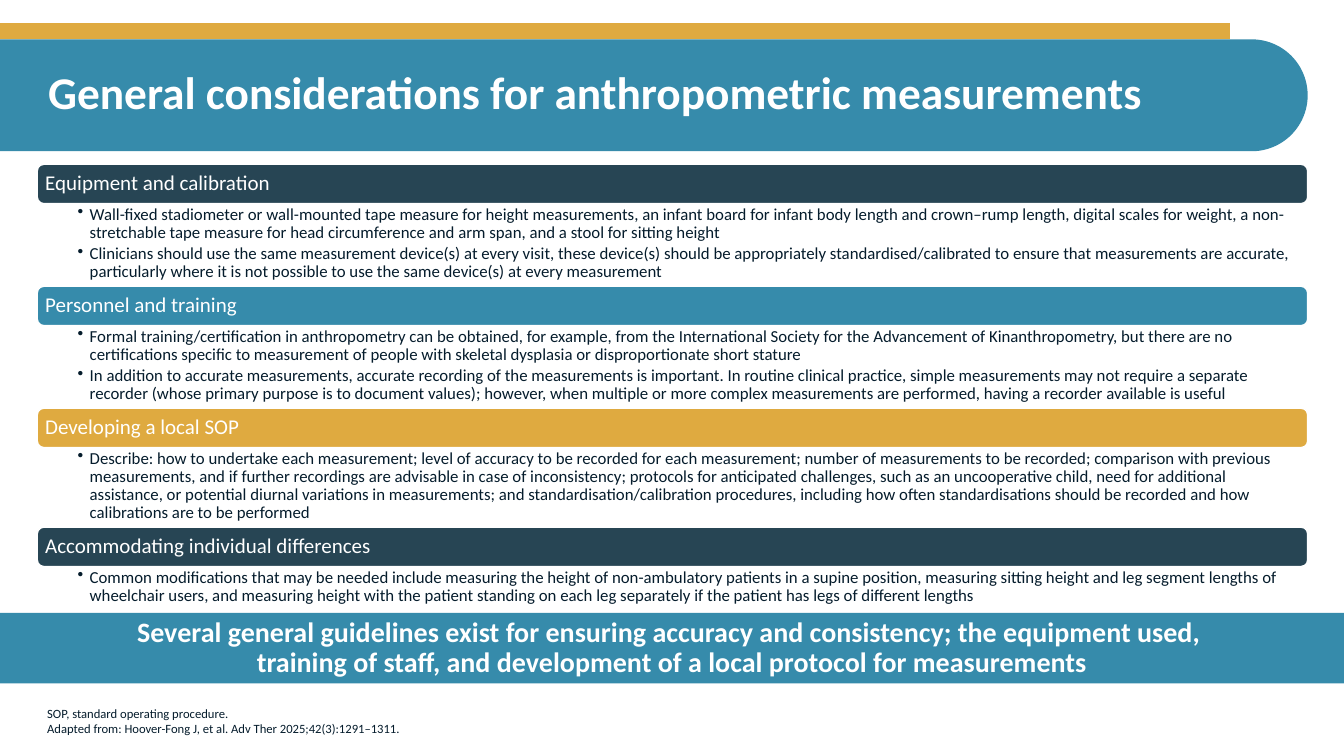
from lxml import etree
from pptx import Presentation
from pptx.dml.color import RGBColor
from pptx.enum.shapes import MSO_SHAPE as Shape
from pptx.enum.text import MSO_ANCHOR as Anchor, PP_ALIGN as Align
from pptx.oxml.ns import qn
from pptx.util import Inches, Pt

TEAL = RGBColor(0x36, 0x8B, 0xAB)
NAVY = RGBColor(0x27, 0x45, 0x54)
GOLD = RGBColor(0xDF, 0xAA, 0x40)
INK = RGBColor(0x05, 0x1C, 0x2C)
WHITE = RGBColor(0xFF, 0xFF, 0xFF)

SLIDE_WIDTH, SLIDE_HEIGHT = 13.33, 7.5
SECTION_LEFT, SECTION_TOP, SECTION_WIDTH = 0.37, 1.63, 12.6
HEADING_HEIGHT = 0.39
BULLET_INDENT = 0.12

# Heading, heading colour, height of the bullet area, bullets
SECTIONS = [
    ("Equipment and calibration", NAVY, 0.82, [
        "Wall-fixed stadiometer or wall-mounted tape measure for height measurements, an infant "
        "board for infant body length and crown–rump length, digital scales for weight, a "
        "non-stretchable tape measure for head circumference and arm span, and a stool for "
        "sitting height",
        "Clinicians should use the same measurement device(s) at every visit, these device(s) "
        "should be appropriately standardised/calibrated to ensure that measurements are "
        "accurate, particularly where it is not possible to use the same device(s) at every "
        "measurement",
    ]),
    ("Personnel and training", TEAL, 0.82, [
        "Formal training/certification in anthropometry can be obtained, for example, from the "
        "International Society for the Advancement of Kinanthropometry, but there are no "
        "certifications specific to measurement of people with skeletal dysplasia or "
        "disproportionate short stature",
        "In addition to accurate measurements, accurate recording of the measurements is "
        "important. In routine clinical practice, simple measurements may not require a separate "
        "recorder (whose primary purpose is to document values); however, when multiple or more "
        "complex measurements are performed, having a recorder available is useful",
    ]),
    ("Developing a local SOP", GOLD, 0.79, [
        "Describe: how to undertake each measurement; level of accuracy to be recorded for each "
        "measurement; number of measurements to be recorded; comparison with previous "
        "measurements, and if further recordings are advisable in case of inconsistency; "
        "protocols for anticipated challenges, such as an uncooperative child, need for "
        "additional assistance, or potential diurnal variations in measurements; and "
        "standardisation/calibration procedures, including how often standardisations should be "
        "recorded and how calibrations are to be performed",
    ]),
    ("Accommodating individual differences", NAVY, 0.42, [
        "Common modifications that may be needed include measuring the height of non-ambulatory "
        "patients in a supine position, measuring sitting height and leg segment lengths of "
        "wheelchair users, and measuring height with the patient standing on each leg separately "
        "if the patient has legs of different lengths",
    ]),
]
MESSAGE = ("Several general guidelines exist for ensuring accuracy and consistency; "
           "the equipment used, \vtraining of staff, and development of a local protocol "
           "for measurements")
FOOTNOTES = [
    "SOP, standard operating procedure.",
    "Adapted from: Hoover-Fong J, et al. Adv Ther 2025;42(3):1291–1311.",
]


def apply_format(target, values):
    for name, value in values.items():
        setattr(target, name, value)


def add_panel(slide, kind, box, color, outline=None):
    panel = slide.shapes.add_shape(kind, *map(Inches, box))
    panel.shadow.inherit = False
    panel.fill.solid()
    panel.fill.fore_color.rgb = color
    if outline is None:
        panel.line.fill.background()
    else:
        panel.line.color.rgb = outline
        panel.line.width = Pt(1)
    return panel


def add_label(slide, box):
    return slide.shapes.add_textbox(*map(Inches, box))


def add_bullet(paragraph):
    properties = paragraph._p.get_or_add_pPr()
    properties.set("lvl", "1")
    properties.set("marL", str(Inches(BULLET_INDENT)))
    properties.set("indent", str(-Inches(BULLET_INDENT)))
    etree.SubElement(properties, qn("a:buChar")).set("char", "•")


def write(holder, lines, size, color, bold=False, anchor=Anchor.MIDDLE, margins=(0.1, 0.05),
          align=Align.LEFT, line_spacing=0.9, space_after=0, bulleted=False):
    """Fill a shape with paragraphs; margins are (sides, top and bottom) or (left, right, both)."""
    frame = holder.text_frame
    left, right, vertical = margins if len(margins) == 3 else (margins[0], *margins)
    apply_format(frame, {
        "word_wrap": True,
        "vertical_anchor": anchor,
        "margin_left": Inches(left),
        "margin_right": Inches(right),
        "margin_top": Inches(vertical),
        "margin_bottom": Inches(vertical),
    })
    for index, line in enumerate(lines):
        paragraph = frame.add_paragraph() if index else frame.paragraphs[0]
        paragraph.text = line
        apply_format(paragraph, {
            "alignment": align,
            "line_spacing": line_spacing,
            "space_after": Pt(space_after),
        })
        if bulleted:
            add_bullet(paragraph)
        for run in paragraph.runs:
            apply_format(run.font, {"name": "Calibri", "size": Pt(size), "bold": bold})
            run.font.color.rgb = color


def add_title_banner(slide, title):
    add_panel(slide, Shape.RECTANGLE, (0, 0.23, 12.2, 0.16), GOLD)
    banner = add_panel(slide, Shape.ROUND_2_SAME_RECTANGLE, (5.93, -5.54, 1.11, 12.97), TEAL)
    banner.rotation = 270
    banner.adjustments[0] = 0
    banner.adjustments[1] = 0.5
    write(add_label(slide, (0.38, 0.39, 12.2, 1.1)), [title], 32.4, WHITE, bold=True)


def add_section(slide, top, heading, color, body_height, bullets):
    bar_box = (SECTION_LEFT, top, SECTION_WIDTH, HEADING_HEIGHT)
    bar = add_panel(slide, Shape.ROUNDED_RECTANGLE, bar_box, color, outline=WHITE)
    write(bar, [heading], 15, WHITE, margins=(0.06, 0.06))
    body_box = (SECTION_LEFT, top + HEADING_HEIGHT, SECTION_WIDTH, body_height)
    write(add_label(slide, body_box), bullets, 12, INK, anchor=Anchor.TOP,
          margins=(0.4, 0.12, 0.02), space_after=2.4, bulleted=True)


def main():
    presentation = Presentation()
    presentation.slide_width = Inches(SLIDE_WIDTH)
    presentation.slide_height = Inches(SLIDE_HEIGHT)
    slide = presentation.slides.add_slide(presentation.slide_layouts[6])

    add_title_banner(slide, "General considerations for anthropometric measurements")

    top = SECTION_TOP
    for heading, color, body_height, bullets in SECTIONS:
        add_section(slide, top, heading, color, body_height, bullets)
        top += HEADING_HEIGHT + body_height

    message_band = add_panel(slide, Shape.RECTANGLE, (0, 6.08, SLIDE_WIDTH, 0.7), TEAL)
    write(message_band, [MESSAGE], 20, WHITE, bold=True, margins=(0.79, 0.05),
          align=Align.CENTER)
    write(add_label(slide, (0.37, 6.71, 10.67, 0.64)), FOOTNOTES, 9, INK,
          anchor=Anchor.BOTTOM, line_spacing=1.0)

    presentation.save("out.pptx")


if __name__ == "__main__":
    main()
